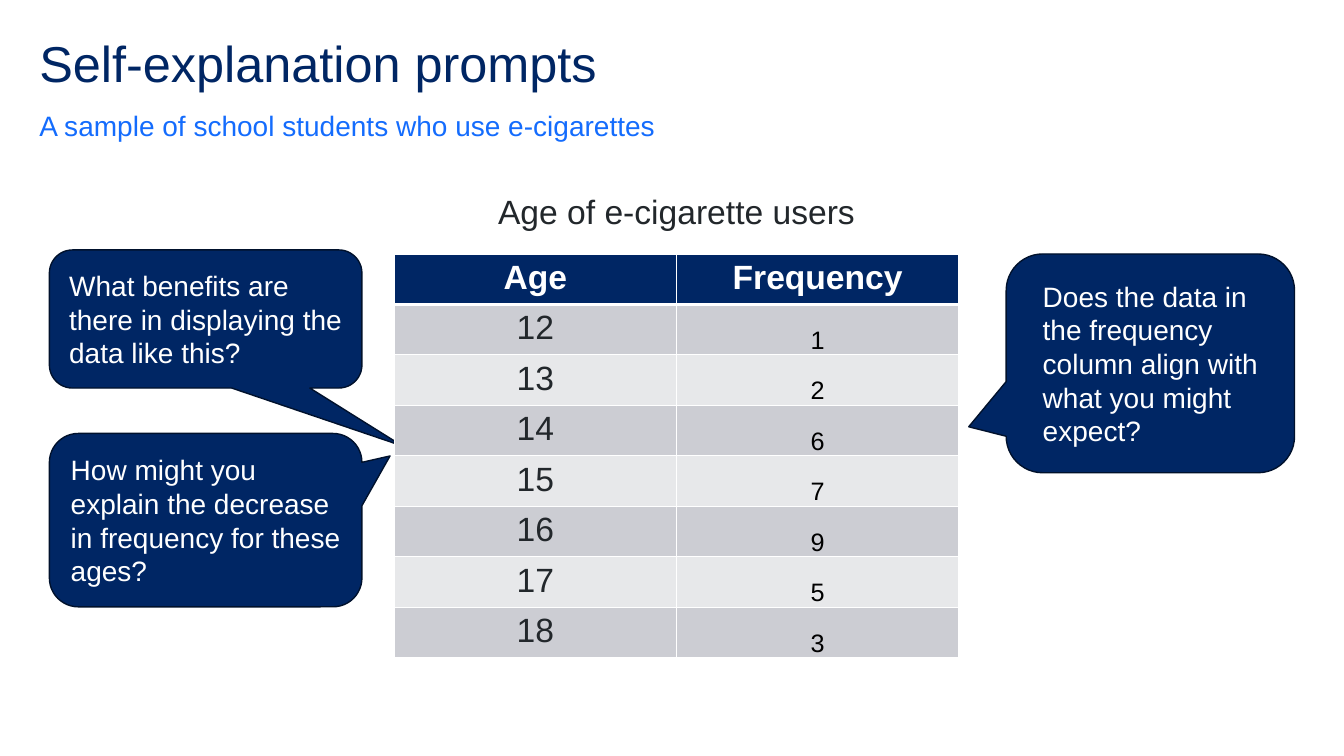
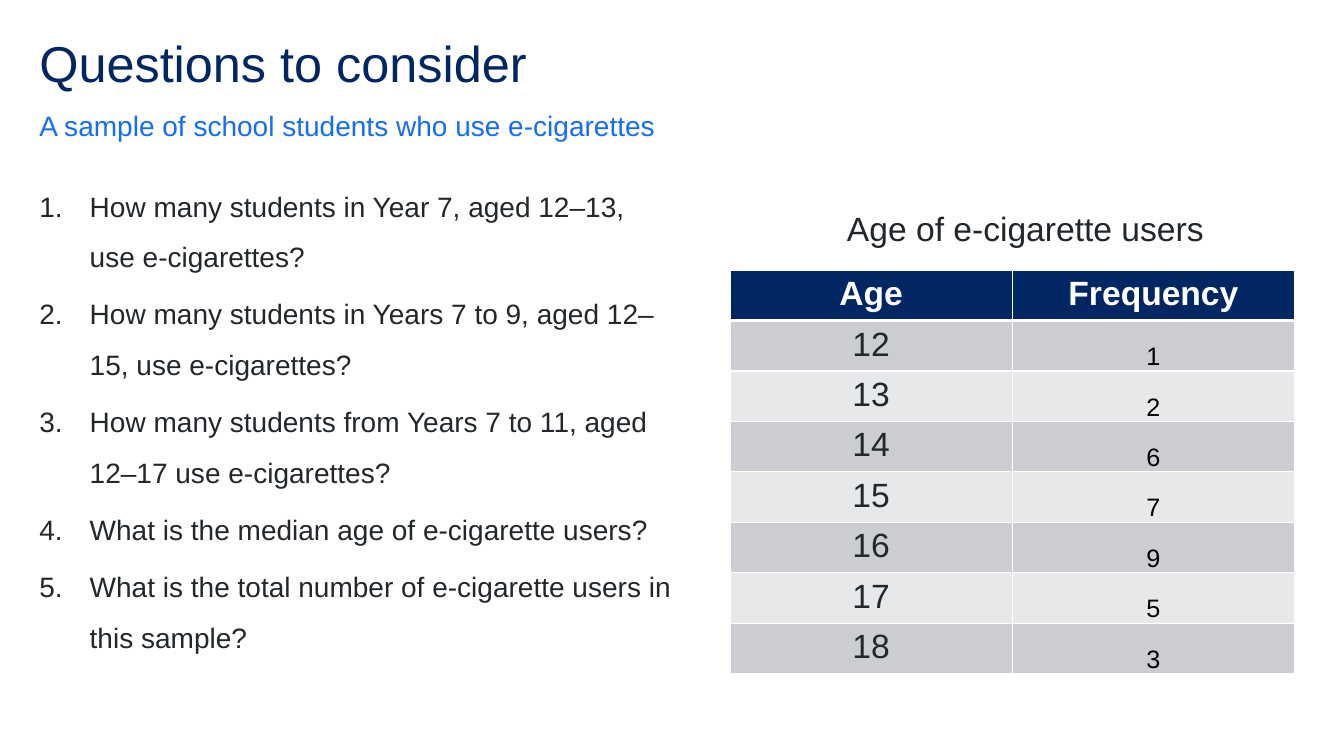
import lxml.etree
import pptx
import pptx.dml.color
import pptx.enum.shapes
import pptx.enum.text
import pptx.oxml.ns
import pptx.util

RGB = pptx.dml.color.RGBColor
ALIGN = pptx.enum.text.PP_ALIGN
ANCHOR = pptx.enum.text.MSO_ANCHOR

NAVY = RGB(0x00, 0x26, 0x64)
NAVY_EDGE = RGB(0x00, 0x11, 0x2C)
BLUE = RGB(0x14, 0x6C, 0xFD)
INK = RGB(0x22, 0x27, 0x2B)
BLACK = RGB(0x00, 0x00, 0x00)
WHITE = RGB(0xFF, 0xFF, 0xFF)
BANDS = (RGB(0xCC, 0xCD, 0xD3), RGB(0xE7, 0xE8, 0xEA))

FONT = "Arial"
SUBTITLE = "A sample of school students who use e-cigarettes"
CAPTION = "Age of e-cigarette users"
HEADINGS = ("Age", "Frequency")
FREQUENCIES = {12: 1, 13: 2, 14: 6, 15: 7, 16: 9, 17: 5, 18: 3}
QUESTIONS = (
    "How many students in Year 7, aged 12–13, use e-cigarettes?",
    "How many students in Years 7 to 9, aged 12–15, use e-cigarettes?",
    "How many students from Years 7 to 11, aged 12–17 use e-cigarettes?",
    "What is the median age of e-cigarette users?",
    "What is the total number of e-cigarette users in this sample?",
)


def px(length):
    """Convert px (100 to the inch) to EMU."""
    return pptx.util.Emu(length * 9144)


def box(*lengths):
    return [px(length) for length in lengths]


def add_xml(parent, tag, **attributes):
    return lxml.etree.SubElement(parent, pptx.oxml.ns.qn(tag), attributes)


def write(frame, *texts, size=20, color=INK, bold=False, align=ALIGN.LEFT,
          anchor=ANCHOR.TOP, margins=None, spacing=None, after=0, numbered=False):
    """Fill a text frame with one paragraph for each text."""
    frame.word_wrap = True
    frame.vertical_anchor = anchor
    if margins is not None:
        (frame.margin_left, frame.margin_top,
         frame.margin_right, frame.margin_bottom) = box(*margins)
    for index, text in enumerate(texts):
        paragraph = frame.paragraphs[0] if index == 0 else frame.add_paragraph()
        paragraph.alignment = align
        paragraph.space_before = pptx.util.Pt(0)
        paragraph.space_after = pptx.util.Pt(after)
        if spacing:
            paragraph.line_spacing = spacing
        if numbered:
            properties = paragraph._p.get_or_add_pPr()
            properties.set("marL", str(px(50)))
            properties.set("indent", str(-px(50)))
            add_xml(properties, "a:buAutoNum", type="arabicPeriod")
        run = paragraph.add_run()
        run.text = text
        run.font.name = FONT
        run.font.size = pptx.util.Pt(size)
        run.font.bold = bold
        run.font.color.rgb = color


def set_borders(cell, **widths):
    """Draw white cell borders; widths are points by side letter."""
    properties = cell._tc.get_or_add_tcPr()
    for side in "LRTB":
        width = pptx.util.Pt(widths.get(side, 1))
        line = add_xml(properties, f"a:ln{side}", w=str(width))
        add_xml(add_xml(line, "a:solidFill"), "a:srgbClr", val=str(WHITE))


class Deck:
    def __init__(self):
        self.presentation = pptx.Presentation()
        self.presentation.slide_width = px(1333)
        self.presentation.slide_height = px(750)
        self.slide = None

    def start_slide(self, heading):
        self.slide = self.presentation.slides.add_slide(
            self.presentation.slide_layouts[5])
        title = self.slide.shapes.title
        title.left, title.top, title.width, title.height = box(39, 39, 1256, 60)
        title.text_frame.auto_size = pptx.enum.text.MSO_AUTO_SIZE.NONE
        write(title.text_frame, heading, size=36, color=NAVY,
              margins=(0, 0, 0, 0), spacing=0.9)
        self.text(39, 107, 1256, 34, SUBTITLE, color=BLUE, anchor=ANCHOR.BOTTOM,
                  margins=(0, 0, 0, 0), spacing=1.5, after=12)

    def text(self, left, top, width, height, *texts, **style):
        area = self.slide.shapes.add_textbox(*box(left, top, width, height))
        write(area.text_frame, *texts, **style)

    def caption(self, left, top):
        self.text(left, top, 856, 50, CAPTION, size=24, align=ALIGN.CENTER)

    def callout(self, left, top, width, height, prompt, tip):
        """Add a speech bubble; tip is its offset as a share of the size."""
        bubble = self.slide.shapes.add_shape(
            pptx.enum.shapes.MSO_SHAPE.ROUNDED_RECTANGULAR_CALLOUT,
            *box(left, top, width, height))
        bubble.adjustments[0], bubble.adjustments[1] = tip
        bubble.shadow.inherit = False
        bubble.fill.solid()
        bubble.fill.fore_color.rgb = NAVY
        bubble.line.color.rgb = NAVY_EDGE
        bubble.line.width = pptx.util.Pt(1)
        write(bubble.text_frame, prompt, color=WHITE, anchor=ANCHOR.MIDDLE)
        bubble.text_frame._txBody.bodyPr.set("anchorCtr", "1")

    def frequency_table(self, left, top):
        rows = [HEADINGS, *FREQUENCIES.items()]
        table = self.slide.shapes.add_table(
            len(rows), len(HEADINGS), *box(left, top, 560, 50 * len(rows))).table
        for r, row in enumerate(rows):
            for c, value in enumerate(row):
                cell = table.cell(r, c)
                set_borders(cell, T=3 if r == 1 else 1, B=3 if r == 0 else 1)
                cell.fill.solid()
                cell.fill.fore_color.rgb = BANDS[(r - 1) % 2] if r else NAVY
                if r == 0:
                    style = dict(size=24, color=WHITE, bold=True)
                elif c == 0:
                    style = dict(size=24)
                else:
                    style = dict(size=18, color=BLACK)
                    cell.vertical_anchor = ANCHOR.BOTTOM
                    cell.margin_left = cell.margin_top = cell.margin_right = px(1)
                    cell.margin_bottom = px(0)
                write(cell.text_frame, str(value), align=ALIGN.CENTER,
                      anchor=None, **style)


def main():
    deck = Deck()

    deck.start_slide("Self-explanation prompts")
    deck.caption(243, 184)
    deck.callout(49, 248, 310, 137, tip=(0.63, 0.92),
                 prompt="What benefits are there in displaying the data like this?")
    deck.callout(49, 430, 310, 172, tip=(0.59, -0.37),
                 prompt="How might you explain the decrease in frequency for these ages?")
    deck.frequency_table(391, 252)
    deck.callout(998, 252, 286, 217, tip=(-0.63, 0.29),
                 prompt="Does the data in the frequency column align with "
                        "what you might expect?")

    deck.start_slide("Questions to consider")
    deck.text(39, 171, 627, 526, *QUESTIONS, margins=(0, 0, 0, 0),
              spacing=1.5, after=5, numbered=True)
    deck.caption(589, 201)
    deck.frequency_table(724, 268)

    deck.presentation.save("out.pptx")


if __name__ == "__main__":
    main()
